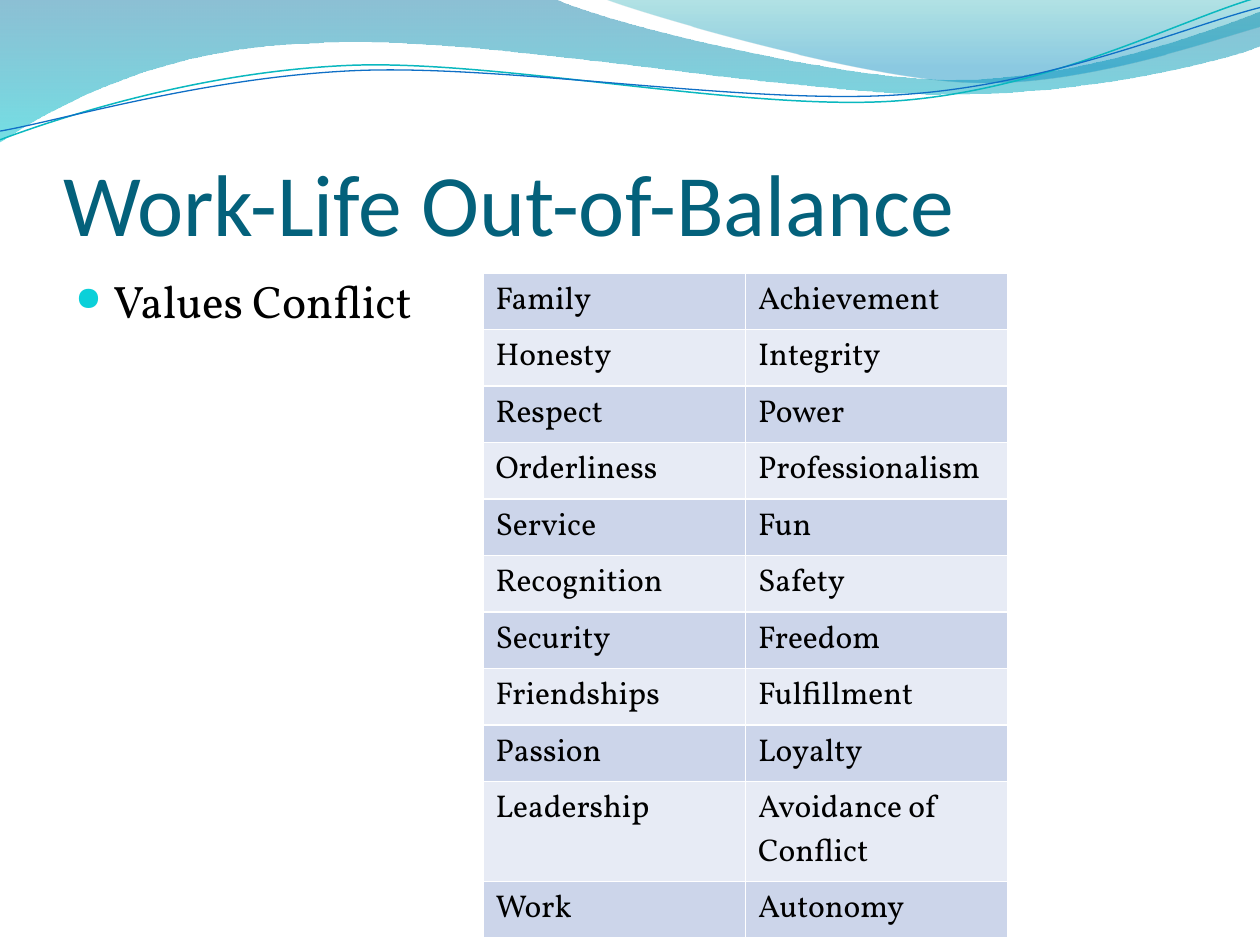
from lxml import etree
from pptx import Presentation
from pptx.dml.color import RGBColor
from pptx.enum.text import MSO_ANCHOR, MSO_AUTO_SIZE, PP_ALIGN
from pptx.oxml.ns import qn
from pptx.util import Pt

LEFT, BOTTOM, NO_FIT = PP_ALIGN.LEFT, MSO_ANCHOR.BOTTOM, MSO_AUTO_SIZE.NONE
TITLE_LAYOUT = 5

# Content
TITLE = "Work-Life Out-of-Balance"
BULLET = "Values Conflict"
VALUES = [
    ("Family", "Achievement"),
    ("Honesty", "Integrity"),
    ("Respect", "Power"),
    ("Orderliness", "Professionalism"),
    ("Service", "Fun"),
    ("Recognition", "Safety"),
    ("Security", "Freedom"),
    ("Friendships", "Fulfillment"),
    ("Passion", "Loyalty"),
    ("Leadership", "Avoidance of Conflict"),
    ("Work", "Autonomy"),
]

COLORS = {
    "title": "04617B", "text": "000000", "bullet": "0BD0D9", "border": "FFFFFF",
    "band_dark": "CCD5EA", "band_light": "E7EBF5",
    "deep_blue": "0074A1", "cyan": "00C6CF", "teal": "00A1A9", "sky": "008BBF",
    "teal_line": "0AB8BF", "blue_line": "0F6FC6",
}
TITLE_FONT = {"name": "Calibri", "size": Pt(50)}
BULLET_FONT = {"name": "Vollkorn", "size": Pt(26)}
CELL_FONT = {"name": "Vollkorn", "size": Pt(18)}

# Outlines in points: two numbers are a straight step, six are a cubic curve
# Gradient stops: position, colour, opacity in percent
WAVES = [
    {"outline": [(0, 0), (316.8, -0.7),
                 (342.7, 12.2, 478.1, 45.4, 545.8, 45.4),
                 (614.2, 45.4, 689.8, 18.7, 720, 6.5), (720.7, 25.9),
                 (709.2, 31.7, 626.4, 54.7, 537.1, 54),
                 (447.8, 54, 275, 20.2, 185, 24.5),
                 (92.9, 25.9, 33.1, 59.8, -0.7, 81.4)],
     "stops": [(0, "deep_blue", 45), (1, "cyan", 55)]},
    {"outline": [(344.9, -0.7),
                 (366.5, 7.9, 491, 44.6, 553.7, 46.8),
                 (616.3, 49.7, 691.9, 23, 720, 15.1), (720, 0)],
     "stops": [(0, "teal", 30), (0.8, "sky", 45)]},
    {"outline": [(0, 79.9),
                 (34.6, 67, 113.8, 41, 199.4, 37.4),
                 (284.4, 33.8, 427, 64.1, 513.4, 57.6),
                 (599.8, 51.1, 675.4, 10.8, 718.6, -1.4)],
     "line": ("teal_line", 0.85)},
    {"outline": [(0, 74.9),
                 (33.8, 69.1, 118.1, 43.9, 203.8, 40.3),
                 (290.2, 36.7, 429.8, 60.5, 516.2, 54),
                 (601.9, 48.2, 677.5, 15.1, 720, 4.3)],
     "line": ("blue_line", 0.75)},
]


def rgb(name):
    return RGBColor.from_string(COLORS[name])


def apply(target, formats):
    for name, value in formats.items():
        setattr(target, name, value)


def add_xml(parent, tag, **attributes):
    return etree.SubElement(parent, qn(tag), attributes)


def write(text_frame, text, font, color):
    paragraph = text_frame.paragraphs[0]
    paragraph.alignment = LEFT
    run = paragraph.add_run()
    run.text = text
    apply(run.font, font)
    run.font.color.rgb = rgb(color)
    return paragraph


def bend(shape, steps):
    """Turn the straight segments of six-number steps into cubic curves."""
    segments = list(shape.element.iter(qn("a:lnTo")))
    for segment, step in zip(segments, steps):
        if len(step) == 2:
            continue
        curve = etree.Element(qn("a:cubicBezTo"))
        for x, y in (step[:2], step[2:4]):
            add_xml(curve, "a:pt", x=str(Pt(x) - shape.left), y=str(Pt(y) - shape.top))
        segment.getparent().replace(segment, curve)
        curve.append(segment[0])


def add_wave(slide, wave):
    outline = wave["outline"]
    ends = [(Pt(step[-2]), Pt(step[-1])) for step in outline]
    builder = slide.shapes.build_freeform(*ends[0])
    builder.add_line_segments(ends[1:], close="stops" in wave)
    shape = builder.convert_to_shape()
    bend(shape, outline[1:])
    shape.shadow.inherit = False
    if "line" in wave:
        color, width = wave["line"]
        shape.fill.background()
        shape.line.color.rgb = rgb(color)
        shape.line.width = Pt(width)
        return
    shape.line.fill.background()
    shape.fill.gradient()
    shape.fill.gradient_angle = 270
    for stop, (position, color, _) in zip(shape.fill.gradient_stops, wave["stops"]):
        stop.position = position
        stop.color.rgb = rgb(color)
    for element, (_, _, opacity) in zip(shape.element.iter(qn("a:srgbClr")), wave["stops"]):
        add_xml(element, "a:alpha", val=str(opacity * 1000))


def add_title(slide):
    title = slide.shapes.title
    apply(title, {"left": Pt(36), "top": Pt(55.4), "width": Pt(648), "height": Pt(90)})
    apply(title.text_frame, {
        "margin_left": 0, "margin_top": Pt(3.6), "margin_right": 0, "margin_bottom": 0,
        "vertical_anchor": BOTTOM, "word_wrap": True, "auto_size": NO_FIT})
    write(title.text_frame, TITLE, TITLE_FONT, "title")
    slide.shapes.element.append(title.element)  # in front of the waves


def add_bullet(slide):
    box = slide.shapes.add_textbox(Pt(36), Pt(152.6), Pt(648), Pt(345.6))
    box.text_frame.word_wrap = True
    paragraph = write(box.text_frame, BULLET, BULLET_FONT, "text")
    properties = paragraph._p.get_or_add_pPr()
    properties.set("marL", str(Pt(21.6)))
    properties.set("indent", str(Pt(-21.6)))
    add_xml(add_xml(properties, "a:spcBef"), "a:spcPct", val="20000")
    add_xml(add_xml(properties, "a:buClr"), "a:srgbClr", val=COLORS["bullet"])
    add_xml(properties, "a:buSzPct", val="73000")
    add_xml(properties, "a:buChar", char="●")


def add_borders(cell):
    properties = cell._tc.get_or_add_tcPr()
    for side in ("a:lnL", "a:lnR", "a:lnT", "a:lnB"):
        line = add_xml(properties, side, w=str(Pt(1)))
        add_xml(add_xml(line, "a:solidFill"), "a:srgbClr", val=COLORS["border"])


def add_values_table(slide):
    row_height, tall_row_height = Pt(32.3), Pt(57.2)
    frame = slide.shapes.add_table(
        len(VALUES), 2, Pt(276), Pt(156), Pt(300), row_height * len(VALUES))
    table = frame.table
    apply(table, {"first_row": False, "horz_banding": False})
    for row, values in enumerate(VALUES):
        wraps = max(map(len, values)) > 15
        table.rows[row].height = tall_row_height if wraps else row_height
        for column, value in enumerate(values):
            cell = table.cell(row, column)
            add_borders(cell)
            cell.fill.solid()
            cell.fill.fore_color.rgb = rgb("band_light" if row % 2 else "band_dark")
            write(cell.text_frame, value, CELL_FONT, "text")


def main():
    presentation = Presentation()
    apply(presentation, {"slide_width": Pt(720), "slide_height": Pt(540)})
    slide = presentation.slides.add_slide(presentation.slide_layouts[TITLE_LAYOUT])
    for wave in WAVES:
        add_wave(slide, wave)
    add_title(slide)
    add_bullet(slide)
    add_values_table(slide)
    presentation.save("out.pptx")


if __name__ == "__main__":
    main()
